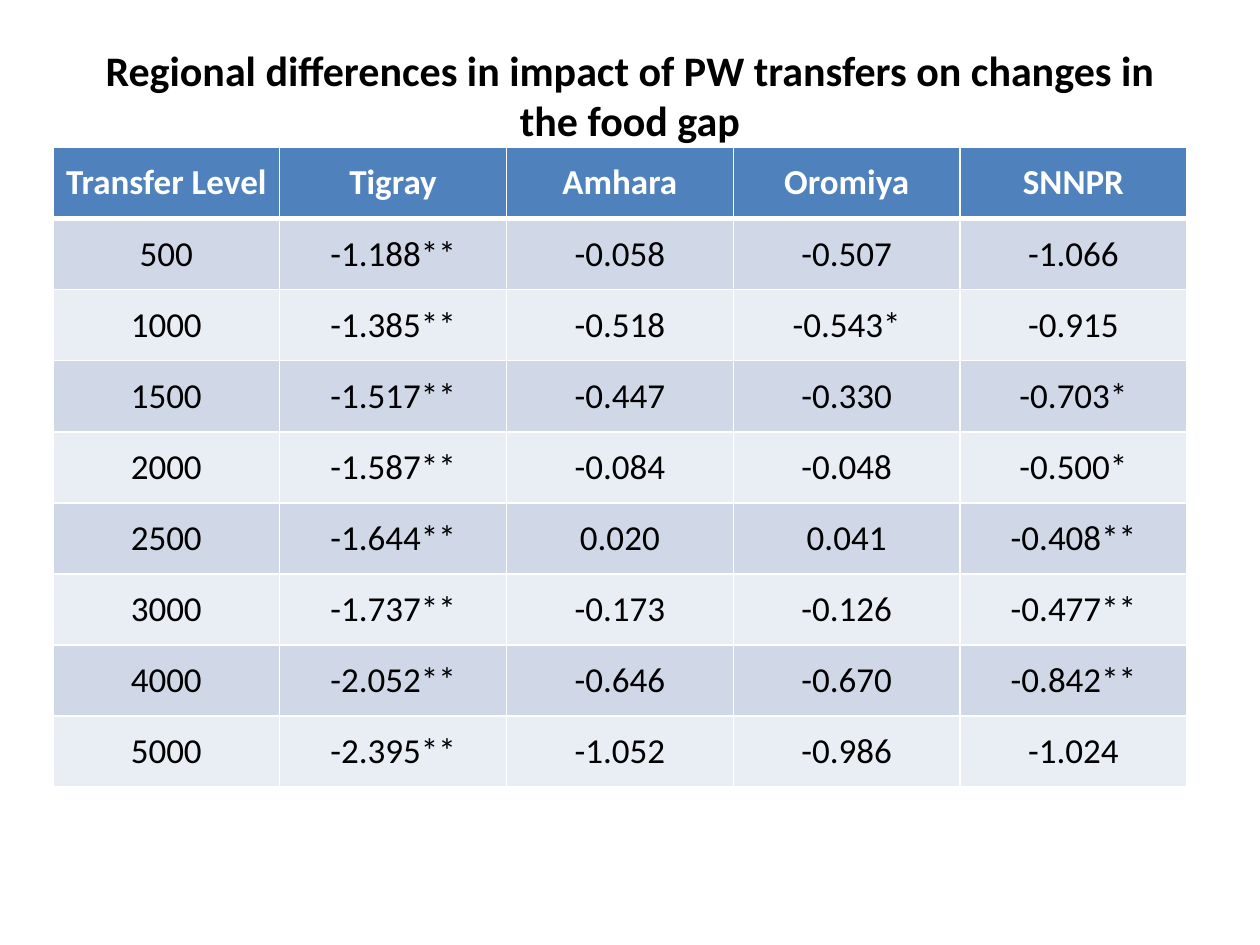
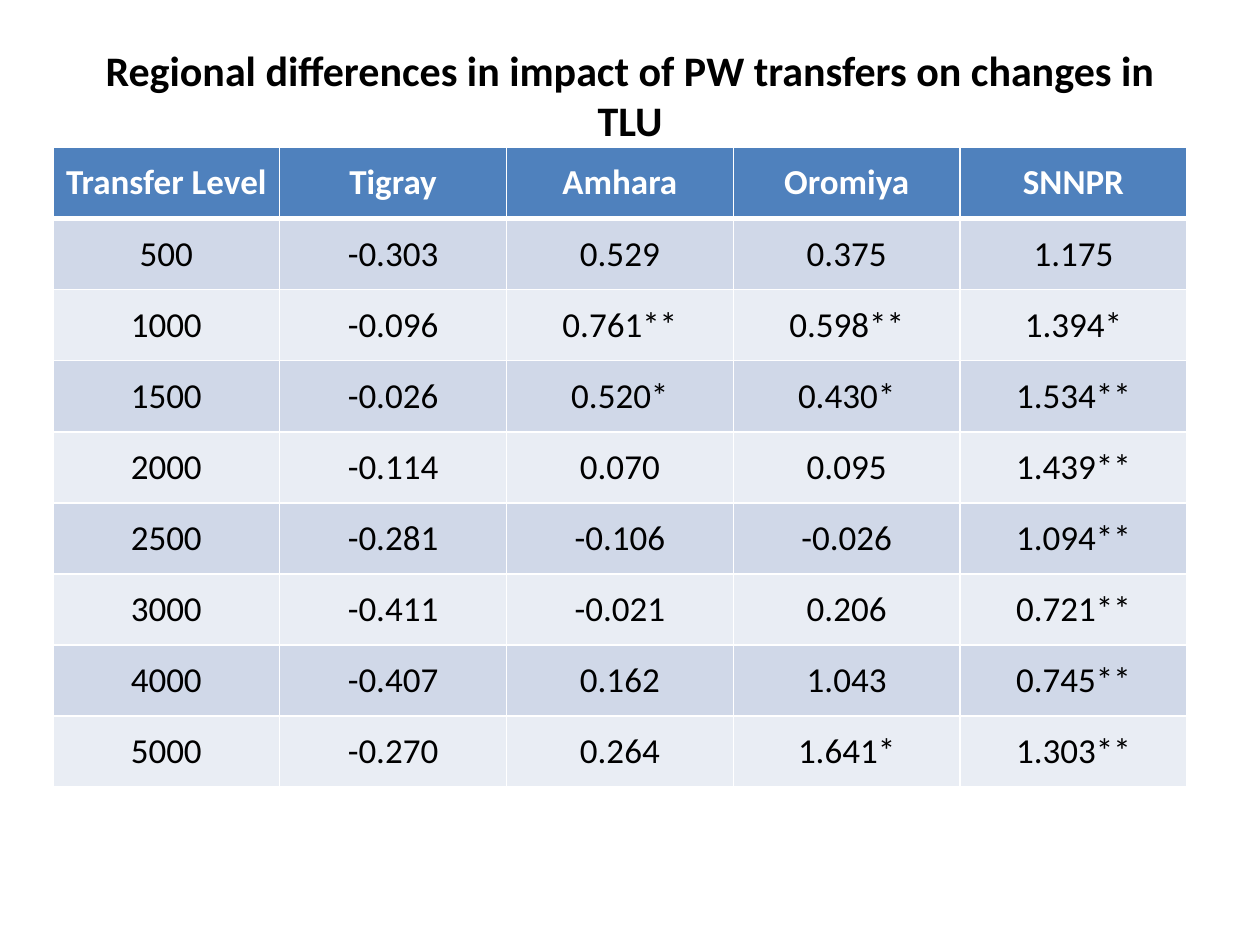
from lxml.etree import SubElement
from pptx import Presentation
from pptx.dml.color import RGBColor
from pptx.enum.text import MSO_ANCHOR, PP_ALIGN
from pptx.oxml.ns import qn
from pptx.util import Inches, Pt

FONT = "Calibri"
BLACK = RGBColor(0x00, 0x00, 0x00)
WHITE = RGBColor(0xFF, 0xFF, 0xFF)
HEADER_BLUE = RGBColor(0x4F, 0x81, 0xBD)
BAND_DARK = RGBColor(0xD0, 0xD8, 0xE8)
BAND_LIGHT = RGBColor(0xE9, 0xED, 0xF4)

THIN, THICK = Pt(1), Pt(3)
TITLE_STEM = "Regional differences in impact of PW transfers on changes in "
HEADINGS = ["Transfer Level", "Tigray", "Amhara", "Oromiya", "SNNPR"]
TRANSFER_LEVELS = ["500", "1000", "1500", "2000", "2500", "3000", "4000", "5000"]

FOOD_GAP_IMPACTS = [
    ["-1.188**", "-0.058", "-0.507", "-1.066"],
    ["-1.385**", "-0.518", "-0.543*", "-0.915"],
    ["-1.517**", "-0.447", "-0.330", "-0.703*"],
    ["-1.587**", "-0.084", "-0.048", "-0.500*"],
    ["-1.644**", "0.020", "0.041", "-0.408**"],
    ["-1.737**", "-0.173", "-0.126", "-0.477**"],
    ["-2.052**", "-0.646", "-0.670", "-0.842**"],
    ["-2.395**", "-1.052", "-0.986", "-1.024"],
]
TLU_IMPACTS = [
    ["-0.303", "0.529", "0.375", "1.175"],
    ["-0.096", "0.761**", "0.598**", "1.394*"],
    ["-0.026", "0.520*", "0.430*", "1.534**"],
    ["-0.114", "0.070", "0.095", "1.439**"],
    ["-0.281", "-0.106", "-0.026", "1.094**"],
    ["-0.411", "-0.021", "0.206", "0.721**"],
    ["-0.407", "0.162", "1.043", "0.745**"],
    ["-0.270", "0.264", "1.641*", "1.303**"],
]


def write_text(frame, text, size=20, color=BLACK, bold=False):
    paragraph = frame.paragraphs[0]
    paragraph.alignment = PP_ALIGN.CENTER
    run = paragraph.add_run()
    run.text = text
    run.font.name = FONT
    run.font.size = Pt(size)
    run.font.color.rgb = color
    run.font.bold = bold


def add_title(slide, outcome):
    title = slide.shapes.add_textbox(Inches(0.5), Inches(0.3), Inches(9), Inches(1.25))
    title.text_frame.word_wrap = True
    title.text_frame.vertical_anchor = MSO_ANCHOR.TOP
    write_text(title.text_frame, TITLE_STEM + outcome, size=24, bold=True)


def set_borders(cell, top=THIN, bottom=THIN):
    properties = cell._tc.get_or_add_tcPr()
    for side, width in (("L", THIN), ("R", THIN), ("T", top), ("B", bottom)):
        border = SubElement(properties, qn(f"a:ln{side}"), w=str(width))
        fill = SubElement(border, qn("a:solidFill"))
        SubElement(fill, qn("a:srgbClr"), val=str(WHITE))


def fill_cell(cell, text, background, color=BLACK, bold=False, **borders):
    set_borders(cell, **borders)
    cell.fill.solid()
    cell.fill.fore_color.rgb = background
    cell.vertical_anchor = MSO_ANCHOR.MIDDLE
    cell.margin_left = cell.margin_right = Inches(0.07)
    cell.margin_top = cell.margin_bottom = 0
    write_text(cell.text_frame, text, color=color, bold=bold)


def add_impact_table(slide, impacts):
    table = slide.shapes.add_table(
        len(impacts) + 1, len(HEADINGS),
        Inches(0.42), Inches(1.17), Inches(9), Inches(5.08),
    ).table
    for column, heading in enumerate(HEADINGS):
        fill_cell(table.cell(0, column), heading, HEADER_BLUE,
                  color=WHITE, bold=True, bottom=THICK)
    for row, (level, values) in enumerate(zip(TRANSFER_LEVELS, impacts), start=1):
        band = BAND_DARK if row % 2 else BAND_LIGHT
        top = THICK if row == 1 else THIN
        for column, value in enumerate([level, *values]):
            fill_cell(table.cell(row, column), value, band, top=top)


def main():
    presentation = Presentation()
    presentation.slide_width = Inches(10)
    presentation.slide_height = Inches(7.5)
    for outcome, impacts in (("the food gap", FOOD_GAP_IMPACTS), ("TLU", TLU_IMPACTS)):
        slide = presentation.slides.add_slide(presentation.slide_layouts[6])
        add_title(slide, outcome)
        add_impact_table(slide, impacts)
    presentation.save("out.pptx")


if __name__ == "__main__":
    main()
